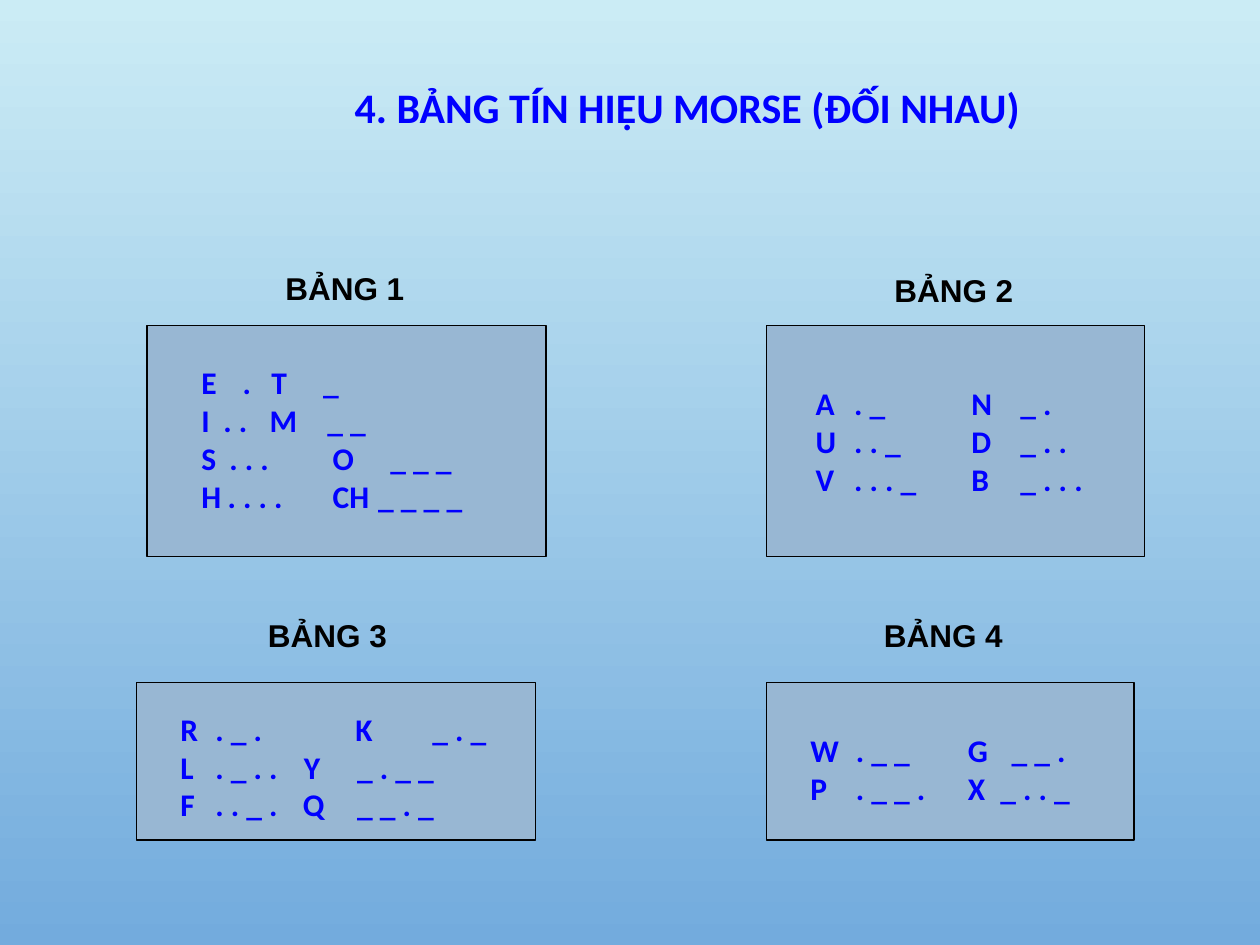
import pptx
import pptx.dml.color
import pptx.enum.shapes
import pptx.enum.text
import pptx.oxml.ns
import pptx.util
from lxml import etree

Pt = pptx.util.Pt
COLORS = {"sky": "CBECF5", "deep": "73ABDD", "panel": "98B7D3",
          "ink": "000000", "signal": "0000FF"}
HEADING = {"size": Pt(18), "name": "Arial", "bold": True}
SIGNAL = {"size": Pt(18), "name": "Calibri", "bold": True}
TITLE = {"size": Pt(24), "name": "Calibri", "bold": True}

TITLE_TEXT = "4. BẢNG TÍN HIỆU MORSE (ĐỐI NHAU)"
TITLE_FRAME = (137.5, 36, 510.5, 54)
HEADING_SIZE = (88, 29)

# Each row: its cells, then the tab stops (points) of the cells after the first.
BOARDS = [
    {"heading": "BẢNG 1", "heading_at": (156, 150),
     "panel": (84, 186, 228, 132), "codes": (108, 204, 178, 93.5),
     "rows": [(("E", ".", "T", "_"), (23.5, 40, 69.5)),
              (("I", ". .", "M", "_ _"), (12.5, 39, 72)),
              (("S", ". . .", "O", "_ _ _"), (16, 75, 108)),
              (("H", ". . . .", "CH", "_ _ _ _"), (15, 75, 101))]},
    {"heading": "BẢNG 2", "heading_at": (504, 151),
     "panel": (438, 186, 216, 132), "codes": (459, 216, 176.5, 72),
     "rows": [(("A", ". _", "N", "_ ."), (22, 89, 117)),
              (("U", ". . _", "D", "_ . ."), (22, 89, 117)),
              (("V", ". . . _", "B", "_ . . ."), (22, 89, 117))]},
    {"heading": "BẢNG 3", "heading_at": (146, 348),
     "panel": (78, 390, 228, 90), "codes": (96, 402, 192, 72),
     "rows": [(("R", ". _ .", "K", "_ . _"), (20, 100, 144)),
              (("L", ". _ . .", "Y", "_ . _ _"), (20, 70.5, 101)),
              (("F", ". . _ .", "Q", "_ _ . _"), (20, 70, 101))]},
    {"heading": "BẢNG 4", "heading_at": (498, 348),
     "panel": (438, 390, 210, 90), "codes": (456, 414, 172, 50.5),
     "rows": [(("W", ". _ _", "G", "_ _ ."), (26, 90, 115)),
              (("P", ". _ _ .", "X", "_ . . _"), (26, 90, 108.5))]},
]


def rgb(name):
    return pptx.dml.color.RGBColor.from_string(COLORS[name])


def set_tabs(paragraph, stops):
    properties = paragraph._p.get_or_add_pPr()
    tab_list = etree.SubElement(properties, pptx.oxml.ns.qn("a:tabLst"))
    for stop in stops:
        etree.SubElement(tab_list, pptx.oxml.ns.qn("a:tab"),
                         pos=str(int(Pt(stop))), algn="l")


def add_text(slide, frame, rows, font, color):
    """Add a middle-anchored text box with one tabbed paragraph per row."""
    text_frame = slide.shapes.add_textbox(*map(Pt, frame)).text_frame
    text_frame.word_wrap = True
    text_frame.margin_right = 0
    text_frame.vertical_anchor = pptx.enum.text.MSO_ANCHOR.MIDDLE
    for index, (cells, stops) in enumerate(rows):
        paragraph = text_frame.add_paragraph() if index else text_frame.paragraphs[0]
        if stops:
            set_tabs(paragraph, stops)
        run = paragraph.add_run()
        run.text = "\t".join(cells)
        for name, value in font.items():
            setattr(run.font, name, value)
        run.font.color.rgb = rgb(color)
    return text_frame


def add_panel(slide, frame):
    panel = slide.shapes.add_shape(
        pptx.enum.shapes.MSO_SHAPE.RECTANGLE, *map(Pt, frame))
    panel.shadow.inherit = False
    panel.fill.solid()
    panel.fill.fore_color.rgb = rgb("panel")
    panel.line.color.rgb = rgb("ink")
    panel.line.width = Pt(0.75)


def main():
    presentation = pptx.Presentation()
    presentation.slide_width, presentation.slide_height = Pt(720), Pt(540)
    slide = presentation.slides.add_slide(presentation.slide_layouts[6])

    background = slide.background.fill
    background.gradient()
    background.gradient_angle = 270
    for stop, color, position in zip(background.gradient_stops, ("sky", "deep"), (0, 1)):
        stop.color.rgb = rgb(color)
        stop.position = position

    title = add_text(slide, TITLE_FRAME, [((TITLE_TEXT,), ())], TITLE, "signal")
    title.margin_right = title.margin_left
    title.paragraphs[0].alignment = pptx.enum.text.PP_ALIGN.CENTER
    title.paragraphs[0].line_spacing = 0.9

    for board in BOARDS:
        add_text(slide, board["heading_at"] + HEADING_SIZE,
                 [((board["heading"],), ())], HEADING, "ink")
        add_panel(slide, board["panel"])
        add_text(slide, board["codes"], board["rows"], SIGNAL, "signal")

    presentation.save("out.pptx")


if __name__ == "__main__":
    main()
